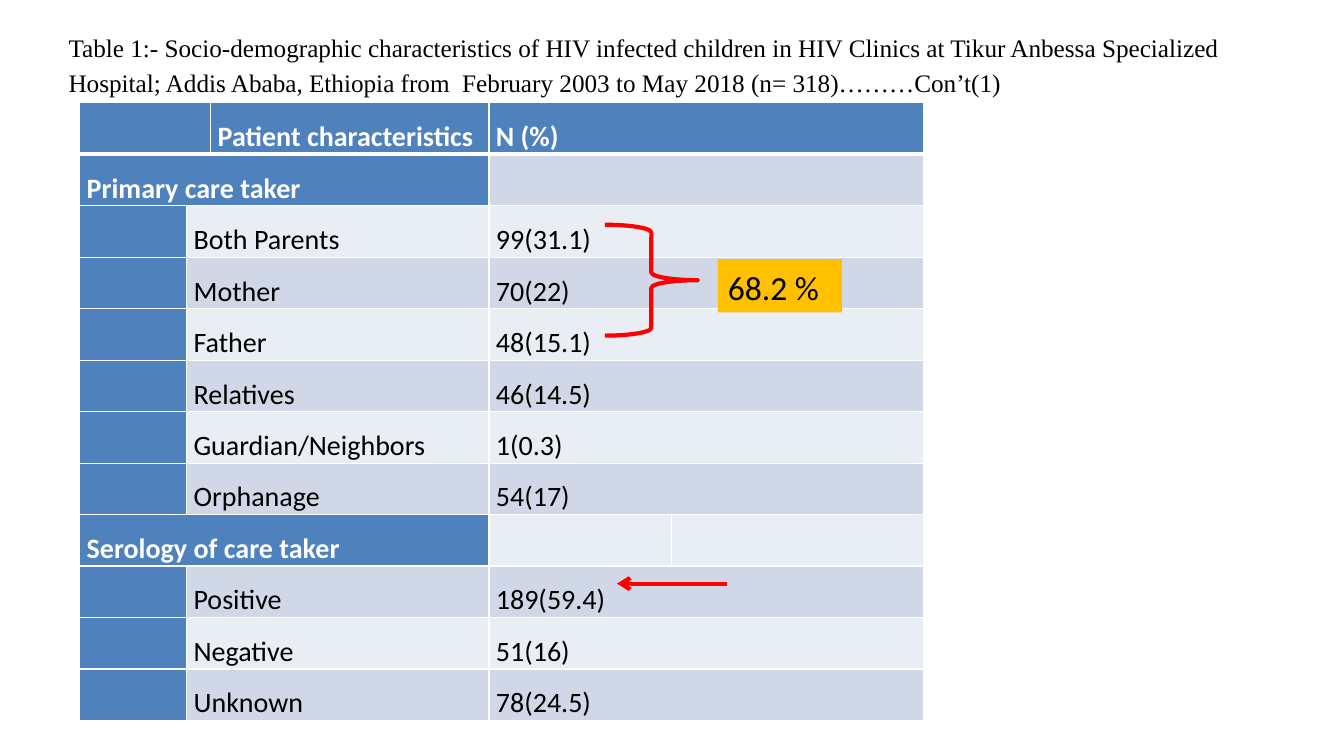
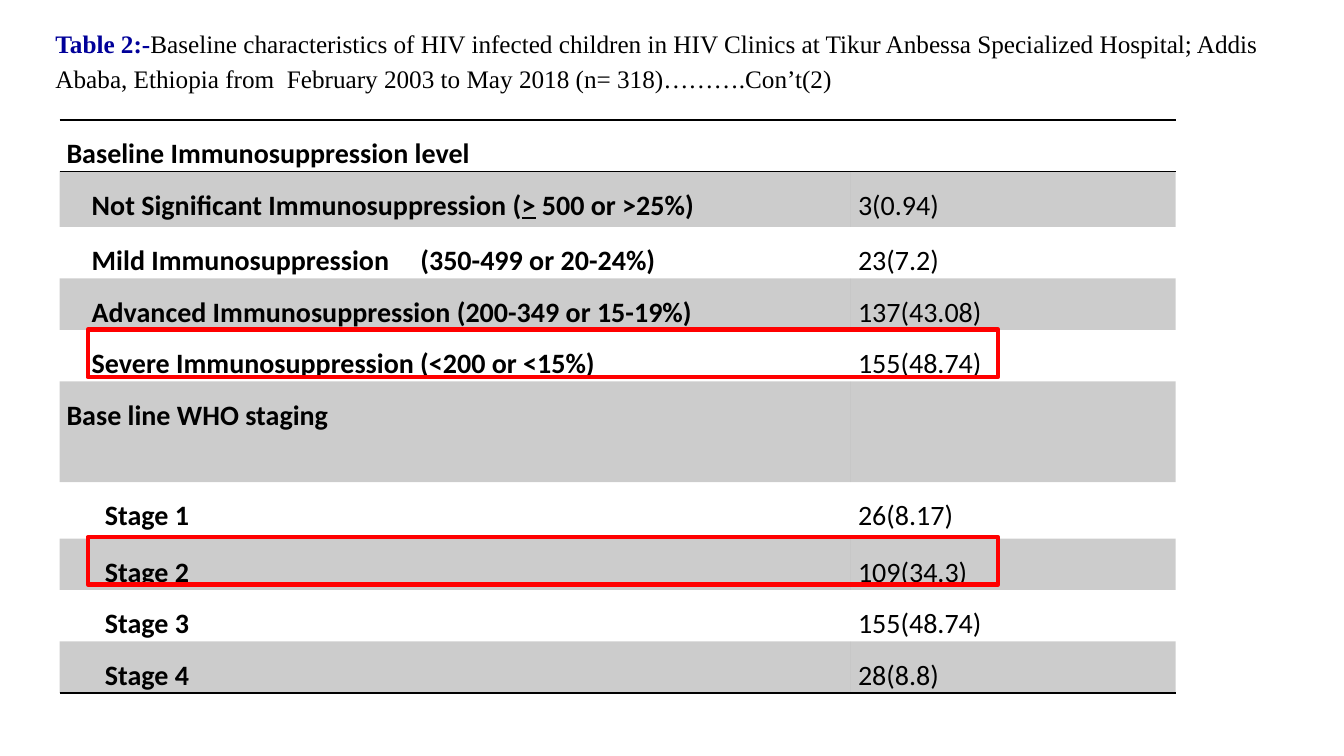
from lxml.etree import SubElement
from pptx import Presentation
from pptx.dml.color import RGBColor
from pptx.enum.shapes import MSO_CONNECTOR, MSO_SHAPE
from pptx.enum.text import MSO_ANCHOR, MSO_AUTO_SIZE, PP_ALIGN
from pptx.oxml import parse_xml
from pptx.oxml.ns import nsdecls, qn
from pptx.util import Inches, Pt

BLACK, WHITE, RED, NAVY = "000000", "FFFFFF", "FF0000", "000099"
BLUE, AMBER = "4F81BD", "FFC000"
BANDS = ["E9EDF4", "D0D8E8"]
NO_STYLE = "{2D5ABB26-0587-4C30-8999-92F81FD0307C}"
SIDES = ["lnL", "lnR", "lnT", "lnB"]
ROW_H, PAD = 0.5, 0.07

TITLE = {"name": "Times New Roman", "size": Pt(18), "bold": False}
BODY = {"name": "Calibri", "size": Pt(20), "bold": False}
BOLD = {**BODY, "bold": True}
TITLE_PARA = {"line_spacing": 1.15, "alignment": PP_ALIGN.LEFT}
CELL_PARA = {"line_spacing": 1.5, "space_after": Pt(10)}

PLACE = ("of HIV infected children in HIV Clinics at Tikur Anbessa Specialized "
         "Hospital; Addis Ababa, Ethiopia from  February 2003 to May 2018 (n= 318)")

SOCIAL = {
    "title": [("Table 1:- Socio-demographic characteristics " + PLACE + "………Con’t(1)", BLACK, {})],
    "title_at": (0.58, 0.23, 12.32, 0.8),
    "table_at": (0.79, 1.02),
    "cols": [1.06, 0.23, 2.76, 1.81, 2.5],
    "head": ("Patient characteristics", "N (%)"),
    "groups": [
        ("Primary care taker", [
            ("Both Parents", "99(31.1)"), ("Mother", "70(22)"), ("Father", "48(15.1)"),
            ("Relatives", "46(14.5)"), ("Guardian/Neighbors", "1(0.3)"),
            ("Orphanage", "54(17)")]),
        ("Serology of care taker", [
            ("Positive", "189(59.4)"), ("Negative", "51(16)"), ("Unknown", "78(24.5)")]),
    ],
}

BASELINE = {
    "title": [("Table 2:-", NAVY, {"bold": True}),
              ("Baseline characteristics " + PLACE + "……….Con’t(2)", BLACK, {})],
    "title_at": (0.45, 0.19, 12.69, 0.8),
    "table_at": (0.59, 1.19),
    "cols": [7.85, 3.22],
    "rows": [
        (ROW_H, 0, "Baseline Immunosuppression level", ""),
        (0.55, 0.25, [("Not Significant Immunosuppression (", {}), (">", {"underline": True}),
                      (" 500 or >25%)", {})], "3(0.94)"),
        (ROW_H, 0.25, "Mild Immunosuppression\t(350-499 or 20-24%)", "23(7.2)"),
        (ROW_H, 0.25, "Advanced Immunosuppression (200-349 or 15-19%)", "137(43.08)"),
        (ROW_H, 0.25, "Severe Immunosuppression (<200 or <15%)", "155(48.74)"),
        (2 * ROW_H, 0, "Base line WHO staging", ""),
        (0.56, 0.38, "Stage 1", "26(8.17)"),
        (ROW_H, 0.38, "Stage 2", "109(34.3)"),
        (ROW_H, 0.38, "Stage 3", "155(48.74)"),
        (ROW_H, 0.38, "Stage 4", "28(8.8)"),
    ],
    "boxed": [4, 7],
    "tab": 3.26,
}


def rgb(color):
    return RGBColor.from_string(color)


def inches(values):
    return [Inches(v) for v in values]


def apply(target, formats):
    for name, value in formats.items():
        setattr(target, name, value)


def add_run(p, text, color, font):
    r = p.add_run()
    r.text = text
    apply(r.font, font)
    r.font.color.rgb = rgb(color)


def add_slide(prs, data):
    slide = prs.slides.add_slide(prs.slide_layouts[5])
    sp = slide.shapes.title
    apply(sp, dict(zip(("left", "top", "width", "height"), inches(data["title_at"]))))
    tf = sp.text_frame
    apply(tf, {"word_wrap": True, "auto_size": MSO_AUTO_SIZE.NONE,
               "vertical_anchor": MSO_ANCHOR.TOP})
    p = tf.paragraphs[0]
    apply(p, TITLE_PARA)
    for text, color, extra in data["title"]:
        add_run(p, text, color, {**TITLE, **extra})
    return slide


def add_table(slide, data, heights):
    left, top = data["table_at"]
    frame = slide.shapes.add_table(len(heights), len(data["cols"]), *inches(
        (left, top, sum(data["cols"]), sum(heights))))
    frame.element.xpath(".//a:tableStyleId")[0].text = NO_STYLE
    table = frame.table
    for col, width in zip(table.columns, data["cols"]):
        col.width = Inches(width)
    for row, height in zip(table.rows, heights):
        row.height = Inches(height)
    return table


def write_cell(cell, text, color, font, align=PP_ALIGN.LEFT, indent=0, tab=None):
    apply(cell, {"margin_left": Inches(PAD + indent), "margin_right": Inches(PAD),
                 "margin_top": 0, "margin_bottom": 0})
    if not text:
        return
    p = cell.text_frame.paragraphs[0]
    apply(p, {**CELL_PARA, "alignment": align})
    if tab and "\t" in text:
        tabs = SubElement(p._p.get_or_add_pPr(), qn("a:tabLst"))
        SubElement(tabs, qn("a:tab"), pos=str(Inches(tab)), algn="l")
    for part, extra in [(text, {})] if isinstance(text, str) else text:
        add_run(p, part, color, {**font, **extra})


def fill_cell(cell, color, alpha=None):
    cell.fill.solid()
    cell.fill.fore_color.rgb = rgb(color)
    if alpha:
        clr = cell._tc.tcPr.find(".//" + qn("a:srgbClr"))
        SubElement(clr, qn("a:alpha"), val=str(alpha * 1000))


def border_cell(cell, color, widths):
    tcPr = cell._tc.get_or_add_tcPr()
    sides = [s for s in SIDES if s in widths]
    for i, side in enumerate(sides):
        tcPr.insert(i, parse_xml(
            f'<a:{side} {nsdecls("a")} w="{Pt(widths[side])}"><a:solidFill>'
            f'<a:srgbClr val="{color}"/></a:solidFill></a:{side}>'))


def add_mark(slide, kind, at, fill=None, line=None):
    sp = slide.shapes.add_shape(kind, *inches(at))
    sp.shadow.inherit = False
    for part, color in ((sp.fill, fill), (sp.line.fill, line)):
        if color:
            part.solid()
            part.fore_color.rgb = rgb(color)
        else:
            part.background()
    if line:
        sp.line.width = Pt(3)
    return sp


def add_arrow(slide, start, end):
    c = slide.shapes.add_connector(MSO_CONNECTOR.STRAIGHT, *inches(start + end))
    c.line.color.rgb = rgb(RED)
    c.line.width = Pt(3)
    spPr = c.element.spPr
    SubElement(spPr.find(qn("a:ln")), qn("a:tailEnd"), type="arrow")
    SubElement(spPr, qn("a:effectLst"))


def social_slide(prs):
    data = SOCIAL
    slide = add_slide(prs, data)
    rows = [("head", *data["head"])]
    for group, items in data["groups"]:
        rows.append(("group", group, ""))
        rows += [("item", *item) for item in items]
    table = add_table(slide, data, [ROW_H] * len(rows))
    label_spans = {"head": (2, 2), "group": (0, 2), "item": (1, 2)}
    for i, (kind, label, value) in enumerate(rows):
        first, last = label_spans[kind]
        band = BLUE if kind == "head" else BANDS[i % 2]
        for j in range(len(data["cols"])):
            cell = table.cell(i, j)
            is_blue = j < first or (j < 3 and kind != "item")
            fill_cell(cell, BLUE if is_blue else band)
            widths = dict.fromkeys(SIDES, 1)
            if kind == "head":
                widths["lnB"] = 3
            elif i == 1:
                widths["lnT"] = 3
            border_cell(cell, WHITE, widths)
        if first < last:
            table.cell(i, first).merge(table.cell(i, last))
        if kind == "head":
            table.cell(i, 0).merge(table.cell(i, 1))
        if label != data["groups"][-1][0]:
            table.cell(i, 3).merge(table.cell(i, 4))
        color, font = (BLACK, BODY) if kind == "item" else (WHITE, BOLD)
        for j, text in ((first, label), (3, value)):
            write_cell(table.cell(i, j), text, color, font, PP_ALIGN.JUSTIFY)

    add_mark(slide, MSO_SHAPE.RIGHT_BRACE, (6, 2.23, 0.92, 1.1), line=RED)
    add_arrow(slide, (7.21, 5.79), (6.12, 5.79))
    sp = add_mark(slide, MSO_SHAPE.RECTANGLE, (7.12, 2.57, 1.23, 0.53), fill=AMBER)
    sp.text_frame.vertical_anchor = MSO_ANCHOR.TOP
    p = sp.text_frame.paragraphs[0]
    apply(p, {"line_spacing": 1.07, "alignment": PP_ALIGN.LEFT})
    add_run(p, "68.2 %", BLACK, {**BODY, "size": Pt(24)})


def baseline_slide(prs):
    data = BASELINE
    slide = add_slide(prs, data)
    rows = data["rows"]
    heights = [row[0] for row in rows]
    table = add_table(slide, data, heights)
    for i, (_, indent, label, value) in enumerate(rows):
        cells = table.cell(i, 0), table.cell(i, 1)
        write_cell(cells[0], label, BLACK, BOLD, indent=indent, tab=data["tab"])
        write_cell(cells[1], value, BLACK, BODY)
        for cell in cells:
            if i % 2:
                fill_cell(cell, BLACK, alpha=20)
            else:
                cell.fill.background()
            if i == 0:
                border_cell(cell, BLACK, {"lnT": 1, "lnB": 1})
            elif i == len(rows) - 1:
                border_cell(cell, BLACK, {"lnB": 1})
    for i in data["boxed"]:
        top = data["table_at"][1] + sum(heights[:i]) + 0.03
        add_mark(slide, MSO_SHAPE.RECTANGLE, (0.87, top, 9.03, 0.47), line=RED)


def main():
    prs = Presentation()
    prs.slide_width, prs.slide_height = inches((13.33, 7.5))
    social_slide(prs)
    baseline_slide(prs)
    prs.save("out.pptx")


if __name__ == "__main__":
    main()
